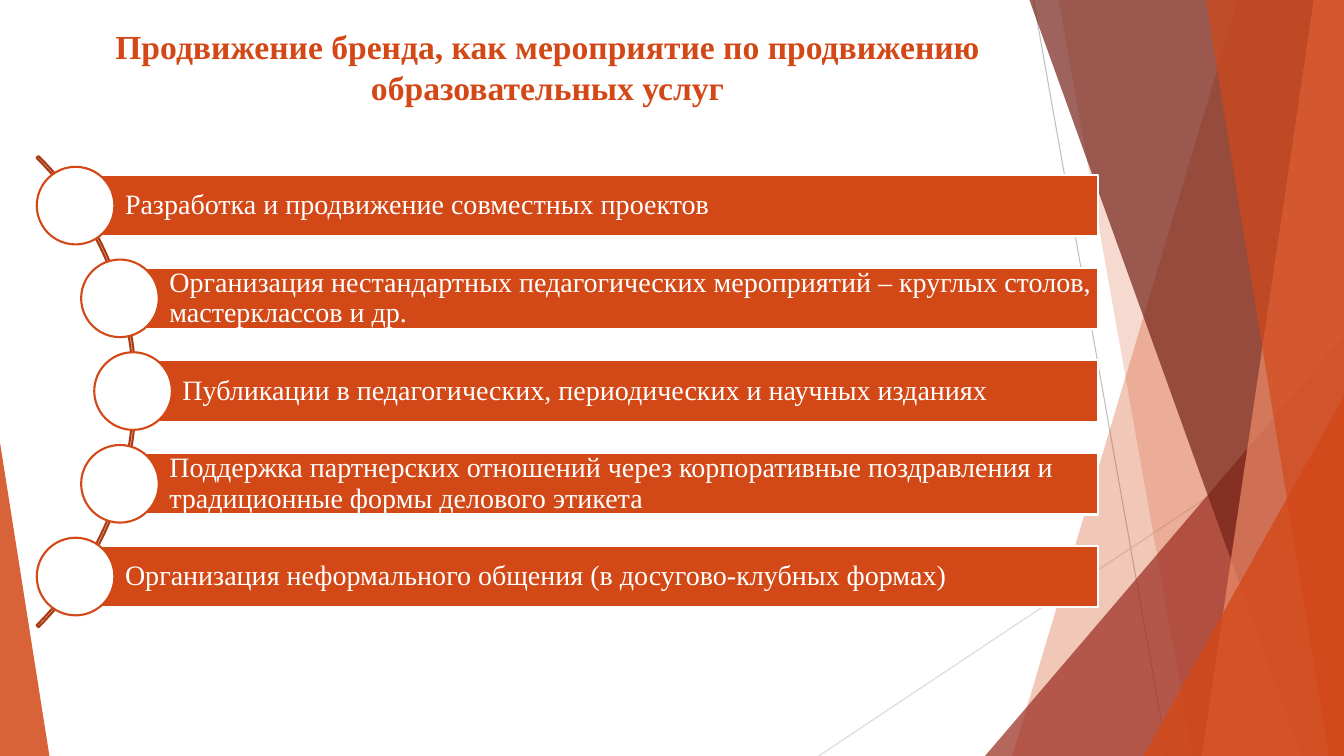
from lxml import etree
from pptx import Presentation
from pptx.dml.color import RGBColor
from pptx.enum.shapes import MSO_CONNECTOR, MSO_SHAPE
from pptx.enum.text import MSO_ANCHOR, PP_ALIGN
from pptx.oxml.ns import qn
from pptx.util import Inches, Pt

LINE = MSO_CONNECTOR.STRAIGHT
RECT, OVAL = MSO_SHAPE.RECTANGLE, MSO_SHAPE.OVAL
ARC, TRI = MSO_SHAPE.BLOCK_ARC, MSO_SHAPE.ISOSCELES_TRIANGLE
TOP, MID = MSO_ANCHOR.TOP, MSO_ANCHOR.MIDDLE
LEFT, CENTER = PP_ALIGN.LEFT, PP_ALIGN.CENTER
W, H = 13.33, 7.5
ORANGE, WHITE = "D34817", "FFFFFF"


def paint(shape, fill=None, alpha=100, line=None, width=1.5):
    """Set fill, opacity in percent and outline; drop the shadow."""
    props = shape._element.spPr
    if fill:
        shape.fill.solid()
        shape.fill.fore_color.rgb = RGBColor.from_string(fill)
        if alpha < 100:
            tint = props.find(".//" + qn("a:srgbClr"))
            etree.SubElement(tint, qn("a:alpha"), val=str(alpha * 1000))
    if line:
        shape.line.color.rgb = RGBColor.from_string(line)
        shape.line.width = Pt(width)
    else:
        shape.line.fill.background()
    etree.SubElement(props, qn("a:effectLst"))


def write(shape, text, size, color, bold=False, align=LEFT, anchor=MID,
          space=1.0, pads=(0.1, 0.05, 0.1, 0.05)):
    frame = shape.text_frame
    frame.word_wrap = True
    frame.vertical_anchor = anchor
    (frame.margin_left, frame.margin_top,
     frame.margin_right, frame.margin_bottom) = map(Inches, pads)
    para = frame.paragraphs[0]
    para.alignment, para.line_spacing = align, space
    run = para.add_run()
    run.text = text
    run.font.name, run.font.size, run.font.bold = "Times New Roman", Pt(size), bold
    run.font.color.rgb = RGBColor.from_string(color)


deck = Presentation()
deck.slide_width, deck.slide_height = Inches(W), Inches(H)
shapes = deck.slides.add_slide(deck.slide_layouts[6]).shapes

# Thin rays behind the facets
for x1, y1, x2, color in [(10.25, 0, 11.58, "BFBFBF"), (W, 4.03, 8.12, "D9D9D9")]:
    ray = shapes.add_connector(LINE, *map(Inches, (x1, y1, x2, H)))
    paint(ray, line=color, width=0.75)

# Facets on the right edge: top x, top y, foot x, colour, opacity
facets = [
    (12.28, 0, 10.04, ORANGE, 30),
    (10.5, 0, 11.83, ORANGE, 20),
    (W, 3.33, 9.77, "9B2D1F", 72),
    (10.21, 0, 12.91, "742217", 70),
    (13.03, 0, 11.92, "EF8C6A", 70),
    (11.96, 0, 13.18, ORANGE, 65),
    (W, 3.93, 11.34, ORANGE, 80),
]
for x, y, foot, color, alpha in facets:
    if y:
        facet = shapes.add_shape(TRI, *map(Inches, (foot, y, W - foot, H - y)))
        facet.adjustments[0] = 1
    else:
        pen = shapes.build_freeform(Inches(x), 0)
        pen.add_line_segments([(Inches(a), Inches(b)) for a, b in
                               [(W, 0), (W, H), (foot, H)]])
        facet = pen.convert_to_shape()
    paint(facet, color, alpha)

wedge = shapes.add_shape(TRI, *map(Inches, (0, 4.39, 0.49, H - 4.39)))
wedge.adjustments[0] = 0
paint(wedge, ORANGE, 85)

title = shapes.add_textbox(*map(Inches, (0.73, 0.18, 9.4, 1.03)))
write(title, "Продвижение бренда, как мероприятие по продвижению образовательных услуг",
      24, ORANGE, bold=True, align=CENTER, anchor=TOP, pads=(0.1, 0.08, 0.1, 0.05))

# Curved list: bars start at the centres of dots that sit on the arc
arc = shapes.add_shape(ARC, *map(Inches, (-5.26, 0.58, 6.61, 6.61)))
for i, value in enumerate((189, 27, 0.004)):
    arc.adjustments[i] = value
arc.fill.background()
paint(arc, line="A93A12")

EDGE, FIRST, STEP, BAR, DOT = 10.89, 2.04, 0.92, 0.61, 0.77
items = [
    (0.75, "Разработка и продвижение совместных проектов"),
    (1.19, "Организация нестандартных педагогических мероприятий – круглых столов, "
           "мастерклассов и др."),
    (1.32, "Публикации в педагогических, периодических и научных изданиях"),
    (1.19, "Поддержка партнерских отношений через корпоративные поздравления и "
           "традиционные формы делового этикета"),
    (0.75, "Организация неформального общения (в досугово-клубных формах)"),
]
for i, (x, text) in enumerate(items):
    y = FIRST + i * STEP
    bar = shapes.add_shape(RECT, *map(Inches, (x, y - BAR / 2, EDGE - x, BAR)))
    paint(bar, ORANGE, line=WHITE)
    write(bar, text, 20, WHITE, space=0.9, pads=(0.49, 0.06, 0.06, 0.06))
    dot = shapes.add_shape(OVAL, *map(Inches, (x - DOT / 2, y - DOT / 2, DOT, DOT)))
    paint(dot, WHITE, line=ORANGE)

deck.save("out.pptx")
